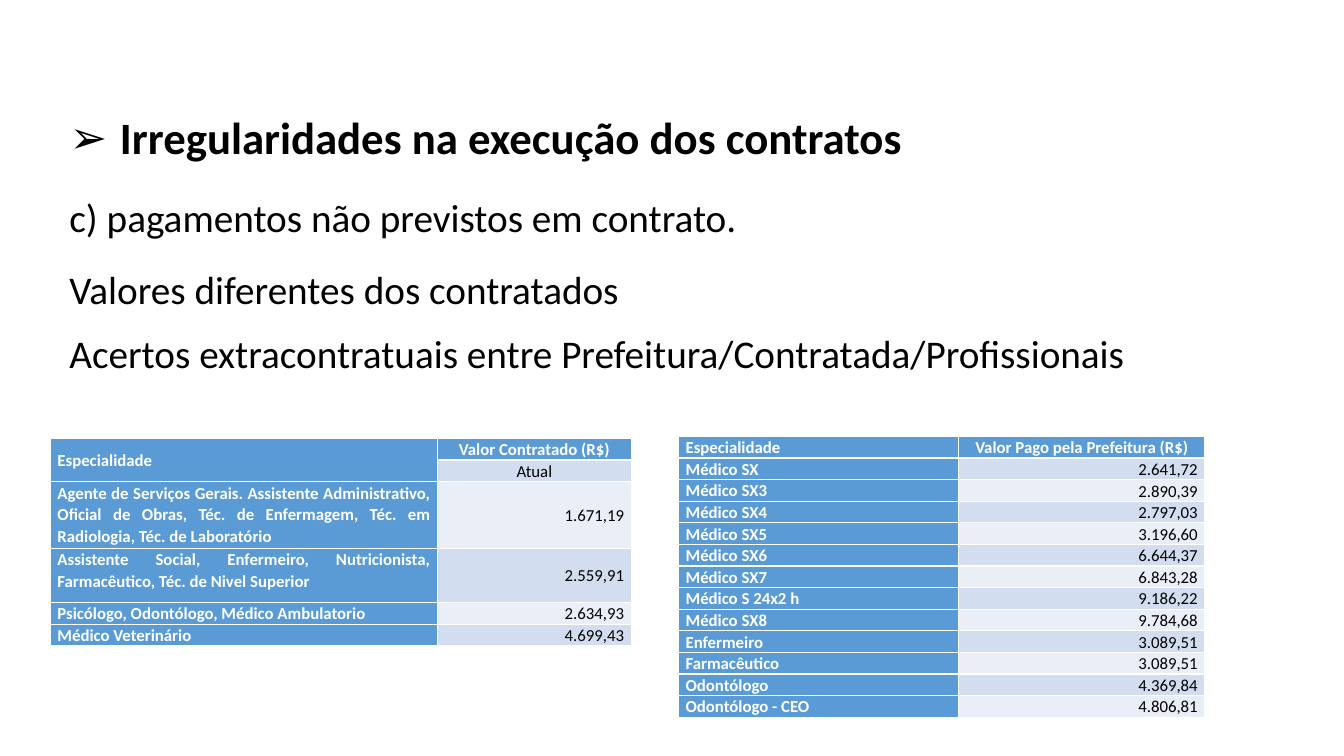
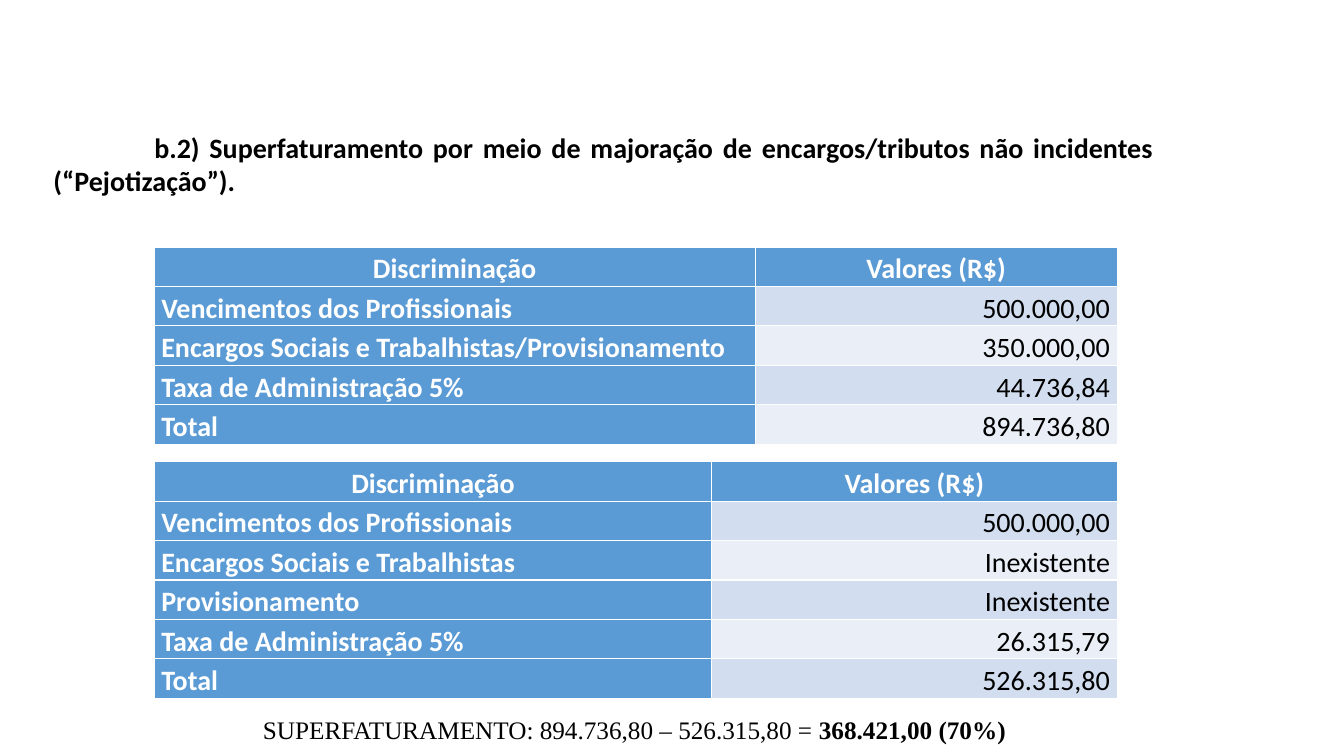
from lxml import etree
from pptx import Presentation
from pptx.dml.color import RGBColor
from pptx.enum.text import MSO_ANCHOR, MSO_AUTO_SIZE, PP_ALIGN
from pptx.oxml.ns import qn
from pptx.util import Inches, Pt

BLACK = RGBColor(0x00, 0x00, 0x00)
WHITE = RGBColor(0xFF, 0xFF, 0xFF)
BLUE = RGBColor(0x5B, 0x9B, 0xD5)
BANDS = (RGBColor(0xEA, 0xEF, 0xF7), RGBColor(0xD2, 0xDE, 0xEF))
BODY_FONT = "Calibri"
NOTE_FONT = "Times New Roman"

LEFT, CENTER, RIGHT, JUSTIFY = PP_ALIGN.LEFT, PP_ALIGN.CENTER, PP_ALIGN.RIGHT, PP_ALIGN.JUSTIFY
TOP, MIDDLE, BOTTOM = MSO_ANCHOR.TOP, MSO_ANCHOR.MIDDLE, MSO_ANCHOR.BOTTOM
NO_FIT = MSO_AUTO_SIZE.NONE
TITLE_ONLY = 5


def add_run(p, text, size, bold=False, color=BLACK, font=BODY_FONT):
    r = p.add_run()
    r.text = text
    r.font.name, r.font.size, r.font.bold = font, Pt(size), bold
    r.font.color.rgb = color


def add_slide(prs, title, box, size, align):
    s = prs.slides.add_slide(prs.slide_layouts[TITLE_ONLY])
    sp = s.shapes.title
    sp.left, sp.top, sp.width, sp.height = (Inches(v) for v in box)
    tf = sp.text_frame
    tf.auto_size, tf.word_wrap, tf.vertical_anchor = NO_FIT, True, TOP
    p = tf.paragraphs[0]
    p.alignment = align
    add_run(p, title, size, bold=True)
    return s, p


def set_indent(p, left, first, bullet=None):
    pPr = p._p.get_or_add_pPr()
    pPr.set("marL", str(Inches(left)))
    pPr.set("indent", str(Inches(first)))
    if bullet:
        etree.SubElement(pPr, qn("a:buFont")).set("typeface", "Arial")
        etree.SubElement(pPr, qn("a:buChar")).set("char", bullet)


def add_text_box(s, box):
    tf = s.shapes.add_textbox(*(Inches(v) for v in box)).text_frame
    tf.word_wrap = True
    return tf


def fill_cell(cell, text, size, spacing, align, anchor, fill, strong):
    cell.fill.solid()
    cell.fill.fore_color.rgb = fill
    cell.margin_left = cell.margin_right = Inches(0.07)
    cell.margin_top = cell.margin_bottom = 0
    cell.vertical_anchor = anchor
    p = cell.text_frame.paragraphs[0]
    p.alignment, p.line_spacing = align, spacing
    if text:
        add_run(p, text, size, bold=strong, color=WHITE if strong else BLACK)


def add_value_table(s, left, top, widths, heights, rows, size, spacing,
                    label_anchor, value_anchor, first_header_align):
    """Blue header row and label column, banded values on the right."""
    frame = s.shapes.add_table(len(rows), len(widths), Inches(left), Inches(top),
                               Inches(sum(widths)), Inches(sum(heights)))
    table = frame.table
    table.first_col = True
    for column, width in zip(table.columns, widths):
        column.width = Inches(width)
    for i, (row, height, (label, value)) in enumerate(zip(table.rows, heights, rows)):
        row.height = Inches(height)
        header = i == 0
        fill_cell(row.cells[0], label, size, spacing,
                  first_header_align if header else JUSTIFY,
                  value_anchor if header else label_anchor, BLUE, True)
        fill_cell(row.cells[1], value, size, spacing, CENTER if header else RIGHT,
                  value_anchor, BLUE if header else BANDS[i % 2], header)
    return table


CONTRACTED = [
    ("Especialidade", "Valor Contratado (R$)"),
    ("", "Atual"),
    ("Agente de Serviços Gerais. Assistente Administrativo, Oficial de Obras, "
     "Téc. de Enfermagem, Téc. em Radiologia, Téc. de Laboratório", "1.671,19"),
    ("Assistente Social, Enfermeiro, Nutricionista, Farmacêutico, "
     "Téc. de Nivel Superior", "2.559,91"),
    ("Psicólogo, Odontólogo, Médico Ambulatorio", "2.634,93"),
    ("Médico Veterinário", "4.699,43"),
]
PAID = [
    ("Especialidade", "Valor Pago pela Prefeitura (R$)"),
    ("Médico SX", "2.641,72"),
    ("Médico SX3", "2.890,39"),
    ("Médico SX4", "2.797,03"),
    ("Médico SX5", "3.196,60"),
    ("Médico SX6", "6.644,37"),
    ("Médico SX7", "6.843,28"),
    ("Médico S 24x2 h", "9.186,22"),
    ("Médico SX8", "9.784,68"),
    ("Enfermeiro", "3.089,51"),
    ("Farmacêutico", "3.089,51"),
    ("Odontólogo", "4.369,84"),
    ("Odontólogo - CEO", "4.806,81"),
]
COST_HEADER = ("Discriminação", "Valores (R$)")
SALARIES = ("Vencimentos dos Profissionais", "500.000,00")
CHARGED = [
    COST_HEADER,
    SALARIES,
    ("Encargos Sociais e Trabalhistas/Provisionamento", "350.000,00"),
    ("Taxa de Administração 5%", "44.736,84"),
    ("Total", "894.736,80"),
]
DUE = [
    COST_HEADER,
    SALARIES,
    ("Encargos Sociais e Trabalhistas", "Inexistente"),
    ("Provisionamento", "Inexistente"),
    ("Taxa de Administração 5%", "26.315,79"),
    ("Total", "526.315,80"),
]


def add_findings(s, box):
    tf = add_text_box(s, box)
    lines = [
        ("c) pagamentos não previstos em contrato.", 0, 12),
        ("Valores diferentes dos contratados", 6, 6),
        ("Acertos extracontratuais entre Prefeitura/Contratada/Profissionais", 6, 6),
    ]
    for i, (text, before, after) in enumerate(lines):
        p = tf.add_paragraph() if i else tf.paragraphs[0]
        p.alignment = JUSTIFY
        p.space_before, p.space_after = Pt(before), Pt(after)
        add_run(p, text, 28)


def build_payments_slide(prs):
    s, p = add_slide(prs, "Irregularidades na execução dos contratos",
                     (0.59, 1.1, 11.83, 0.93), 32, LEFT)
    p.line_spacing = 0.9
    set_indent(p, 0.5, -0.5, "➢")
    add_findings(s, (0.59, 1.87, 11.51, 2.3))

    row = 0.21
    table = add_value_table(s, 0.5, 4.35, (3.84, 1.92), (row, row, 0.66, 0.54, row, row),
                            CONTRACTED, 12, 1.07, TOP, MIDDLE, JUSTIFY)
    table.cell(0, 0).merge(table.cell(1, 0))
    table.cell(1, 1).text_frame.paragraphs[0].alignment = CENTER
    add_value_table(s, 6.73, 4.33, (2.78, 2.44), [row] * len(PAID),
                    PAID, 12, 1.07, BOTTOM, MIDDLE, JUSTIFY)


def add_overcharge_note(s, box):
    p = add_text_box(s, box).paragraphs[0]
    p.alignment, p.line_spacing = JUSTIFY, 1.15
    add_run(p, "SUPERFATURAMENTO: 894.736,80 – 526.315,80 = ", 18, font=NOTE_FONT)
    add_run(p, "368.421,00 (70%)", 18, bold=True, font=NOTE_FONT)


def build_overcharge_slide(prs):
    s, p = add_slide(prs, "b.2) Superfaturamento por meio de majoração de "
                     "encargos/tributos não incidentes (“Pejotização”).",
                     (0.43, 1.24, 11.11, 0.8), 20, JUSTIFY)
    set_indent(p, 0, 1)
    for top, widths, rows in ((2.45, (5.96, 3.59), CHARGED), (4.58, (5.53, 4.02), DUE)):
        add_value_table(s, 1.53, top, widths, [0.36] * len(rows),
                        rows, 20, 1.15, BOTTOM, BOTTOM, CENTER)
    add_overcharge_note(s, (2.51, 6.99, 8.23, 0.45))


def main():
    prs = Presentation()
    prs.slide_width, prs.slide_height = Inches(13.33), Inches(7.5)
    build_payments_slide(prs)
    build_overcharge_slide(prs)
    prs.save("out.pptx")


if __name__ == "__main__":
    main()
